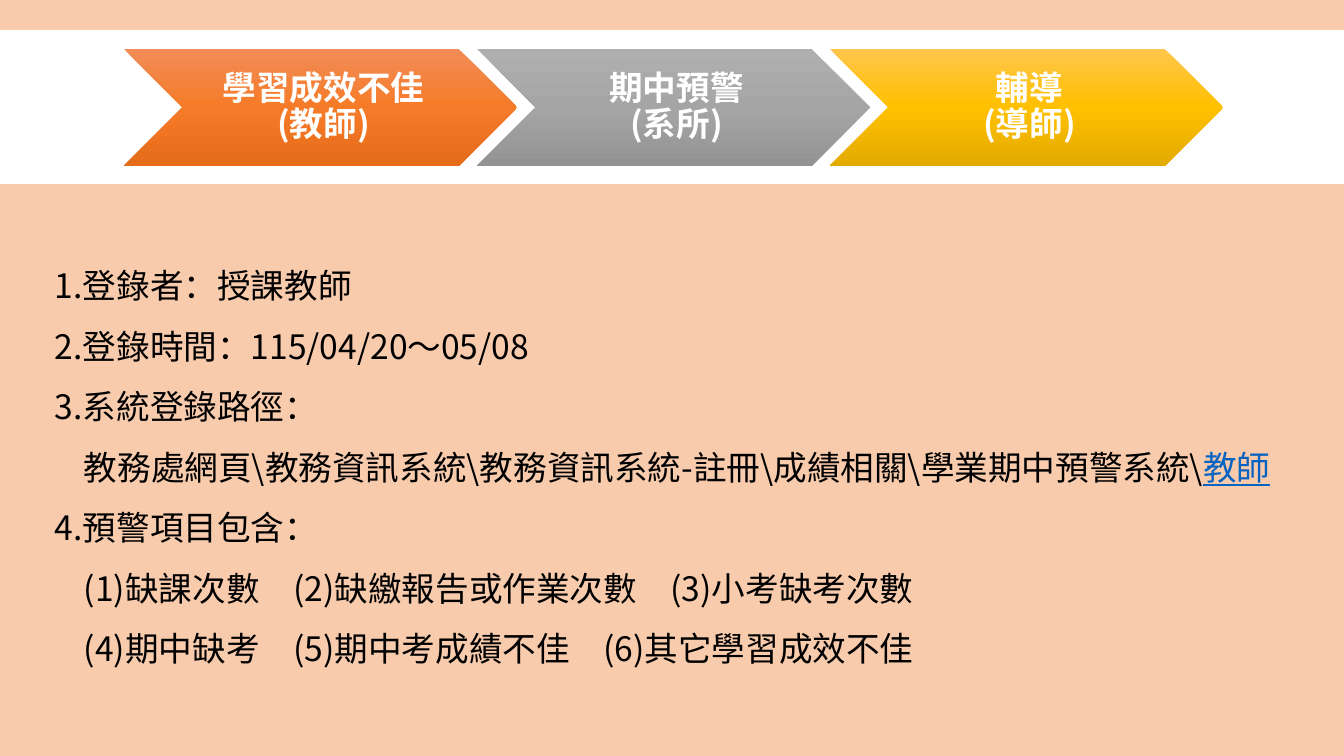
from copy import deepcopy

from lxml.etree import SubElement
from pptx import Presentation
from pptx.dml.color import RGBColor
from pptx.enum.shapes import MSO_SHAPE as Shape
from pptx.enum.text import MSO_ANCHOR as Anchor, MSO_AUTO_SIZE as AutoSize, PP_ALIGN as Align
from pptx.oxml.ns import qn
from pptx.util import Emu, Pt

FONT = "Noto Sans CJK SC"
SLIDE_WIDTH, SLIDE_HEIGHT = 1344, 756
STEP_LEFT, STEP_PITCH = 124, 353

STEPS = [
    ("學習成效不佳\n(教師)", ("F18C57", "F67B28", "E56C19")),
    ("期中預警\n(系所)", ("AFAFAF", "A5A5A5", "939393")),
    ("輔導\n(導師)", ("FFC64B", "FFC000", "E3AB00")),
]

INSTRUCTIONS = [
    (0, "1.登錄者：授課教師", ""),
    (0, "2.登錄時間：115/04/20～05/08", ""),
    (0, "3.系統登錄路徑：", ""),
    (29, "教務處網頁\\教務資訊系統\\教務資訊系統-註冊\\成績相關\\學業期中預警系統\\", "教師"),
    (0, "4.預警項目包含：", ""),
    (29, "(1)缺課次數　(2)缺繳報告或作業次數　(3)小考缺考次數", ""),
    (29, "(4)期中缺考　(5)期中考成績不佳　(6)其它學習成效不佳", ""),
]


def px(length):
    return Emu(round(length * 914400 / 100.8))


def color(value):
    return RGBColor.from_string(value)


def format_span(span, value, bold=False, underline=False):
    span.font.name = FONT
    span.font.size = Pt(24)
    span.font.bold = bold
    span.font.underline = underline
    span.font.color.rgb = color(value)
    SubElement(span.font._element, qn("a:ea"), typeface=FONT)


def add_block(page, kind, left, top, width, height):
    block = page.shapes.add_shape(kind, px(left), px(top), px(width), px(height))
    block.shadow.inherit = False
    block.line.fill.background()
    return block


def add_band(page, top, height, value):
    band = add_block(page, Shape.RECTANGLE, 0, top, SLIDE_WIDTH, height)
    band.fill.solid()
    band.fill.fore_color.rgb = color(value)


def fill_gradient(shape, values):
    shape.fill.gradient()
    shape.fill.gradient_angle = 270
    stop_list = shape._element.spPr.find(".//" + qn("a:gsLst"))
    stop_list.append(deepcopy(stop_list[-1]))
    for index, (stop, value) in enumerate(zip(shape.fill.gradient_stops, values)):
        stop.position = index / 2
        stop.color.rgb = color(value)


def add_step(page, left, text, values):
    step = add_block(page, Shape.CHEVRON, left, 49, 393, 117)
    fill_gradient(step, values)
    frame = step.text_frame
    frame.word_wrap = True
    frame.vertical_anchor = Anchor.MIDDLE
    frame.margin_left = px(10)
    frame.margin_top = frame.margin_right = frame.margin_bottom = px(4)
    para = frame.paragraphs[0]
    para.text = text
    para.alignment = Align.CENTER
    para.line_spacing = 0.9
    for span in para.runs:
        format_span(span, "FFFFFF", bold=True)


def add_instructions(page):
    box = page.shapes.add_textbox(px(45), px(240), px(1299), px(437))
    frame = box.text_frame
    frame.word_wrap = True
    frame.auto_size = AutoSize.SHAPE_TO_FIT_TEXT
    for index, (indent, text, link) in enumerate(INSTRUCTIONS):
        para = frame.add_paragraph() if index else frame.paragraphs[0]
        para.text = text
        para.line_spacing = 1.5
        if indent:
            properties = para._p.get_or_add_pPr()
            properties.set("marL", str(px(indent)))
            properties.set("indent", "0")
        format_span(para.runs[0], "000000")
        if link:
            span = para.add_run()
            span.text = link
            format_span(span, "0563C1", underline=True)


def main():
    deck = Presentation()
    deck.slide_width, deck.slide_height = px(SLIDE_WIDTH), px(SLIDE_HEIGHT)
    page = deck.slides.add_slide(deck.slide_layouts[6])
    add_band(page, 0, SLIDE_HEIGHT, "F8CBAD")
    add_band(page, 30, 154, "FFFFFF")
    for index, (text, values) in enumerate(STEPS):
        add_step(page, STEP_LEFT + index * STEP_PITCH, text, values)
    add_instructions(page)
    deck.save("out.pptx")


if __name__ == "__main__":
    main()
